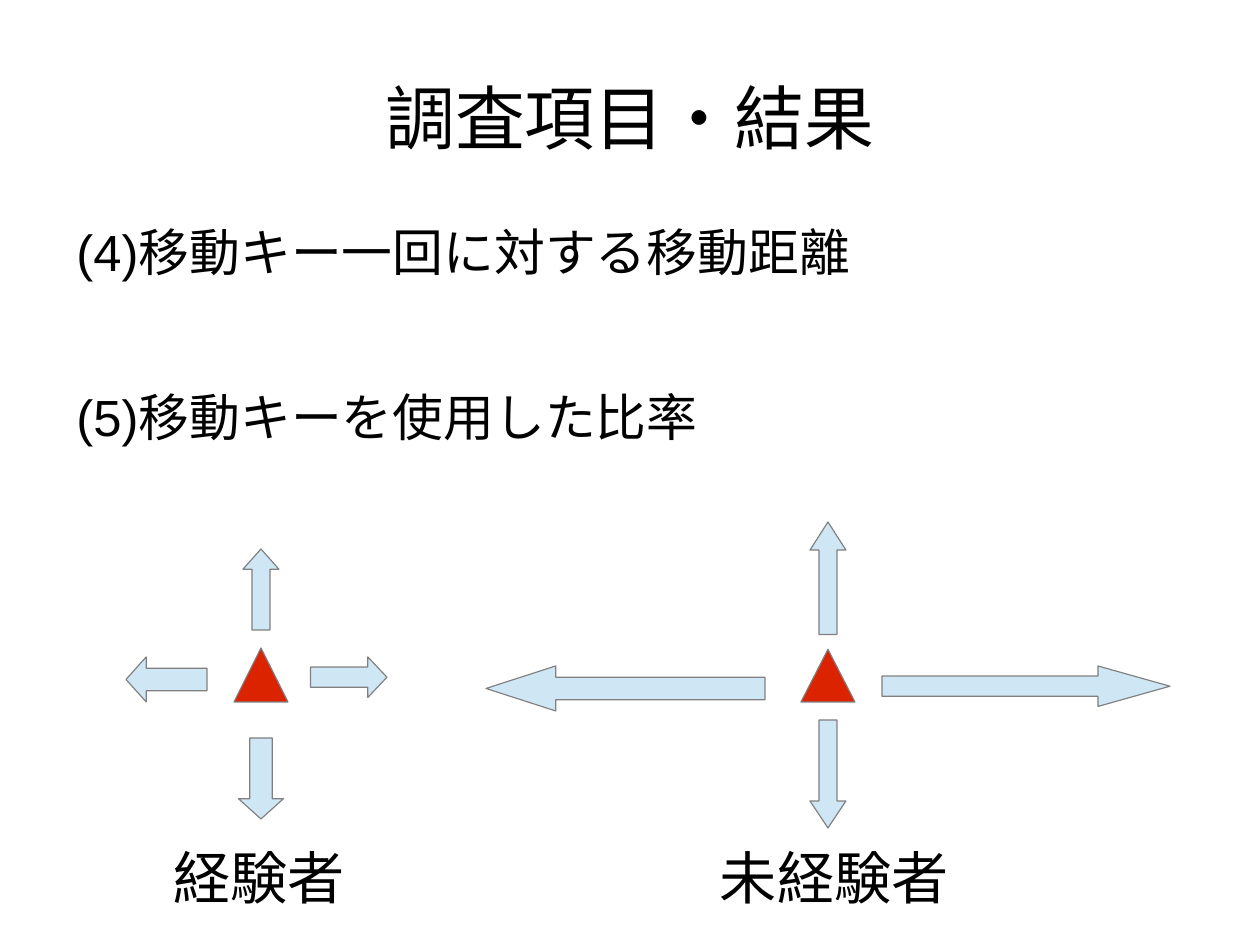
"""Build the survey results slide with key movement diagrams."""
from lxml import etree
from pptx import Presentation
from pptx.dml.color import RGBColor
from pptx.enum import shapes, text
from pptx.oxml.ns import qn
from pptx import util as u

TITLE = "調査項目・結果"
ITEMS = ["(4)移動キー一回に対する移動距離", "(5)移動キーを使用した比率"]
LABELS = [("経験者", 3.4, 4.72), ("未経験者", 15.67, 5.74)]

KIND = shapes.MSO_SHAPE
GROUPS = [
    {"mid": 5.8, "top": 14.4, "tall": 1.2,
     "up": (12.2, 0.8, 1.8), "down": (16.4, 1, 1.8),
     "left": (2.8, 14.6, 1.8, 1), "right": (6.9, 14.6, 1.7, 0.9)},
    {"mid": 18.4, "top": 14.43, "tall": 1.17,
     "up": (11.6, 0.8, 2.5), "down": (16, 0.8, 2.4),
     "left": (10.8, 14.8, 6.2, 1), "right": (19.6, 14.8, 6.4, 0.9)},
]
ARROWS = {"up": KIND.UP_ARROW, "down": KIND.DOWN_ARROW,
          "left": KIND.LEFT_ARROW, "right": KIND.RIGHT_ARROW}
HEAD = 0.25
BASE = 1.2
RED, BLUE, GRAY, BLACK = "DC2300", "CFE7F5", "808080", "000000"
CENTER = {"alignment": text.PP_ALIGN.CENTER}
LIST = {"space_after": u.Pt(66)}


def color(part, code):
    part.rgb = RGBColor.from_string(code)


def put(item, vals):
    for name, val in vals.items():
        setattr(item, name, val)


def write(slide, box, lines, size, form, anchor, indent=None):
    frame = slide.shapes.add_textbox(*map(u.Cm, box)).text_frame
    put(frame, {"word_wrap": True, "vertical_anchor": anchor,
                "margin_left": 0, "margin_top": 0,
                "margin_right": 0, "margin_bottom": 0})
    for num, line in enumerate(lines):
        para = frame.add_paragraph() if num else frame.paragraphs[0]
        put(para, form)
        if indent:
            props = para._p.get_or_add_pPr()
            for name, val in zip(("marL", "indent"), indent):
                props.set(name, str(u.Cm(val)))
        run = para.add_run()
        run.text = line
        put(run.font, {"name": "Arial", "size": u.Pt(size)})
        color(run.font.color, BLACK)
        etree.SubElement(run.font._element, qn("a:ea"), typeface="Arial")


def draw(slide, kind, box, fill):
    shape = slide.shapes.add_shape(kind, *map(u.Cm, box))
    shape.shadow.inherit = False
    shape.fill.solid()
    color(shape.fill.fore_color, fill)
    color(shape.line.color, GRAY)
    shape.line.width = 0
    return shape


def main():
    deck = Presentation()
    put(deck, {"slide_width": u.Cm(28), "slide_height": u.Cm(21)})
    slide = deck.slides.add_slide(deck.slide_layouts[6])
    mid, top = text.MSO_ANCHOR.MIDDLE, text.MSO_ANCHOR.TOP
    write(slide, (1.4, 0.84, 25.2, 3.5), [TITLE], 44, CENTER, mid)
    write(slide, (1.4, 4.9, 25.2, 13.87), ITEMS, 32, LIST, top, (1.2, -0.9))
    for group in GROUPS:
        axis = group["mid"]
        box = axis - BASE / 2, group["top"], BASE, group["tall"]
        draw(slide, KIND.ISOSCELES_TRIANGLE, box, RED)
        for way, kind in ARROWS.items():
            box = group[way]
            if len(box) == 3:
                y, wide, tall = box
                box = axis - wide / 2, y, wide, tall
            arrow = draw(slide, kind, box, BLUE)
            arrow.adjustments[1] = HEAD * max(box[2:]) / min(box[2:])
    for label, x, wide in LABELS:
        write(slide, (x, 18.76, wide, 1.43), [label], 36, CENTER, mid)
    deck.save("out.pptx")


if __name__ == "__main__":
    main()
